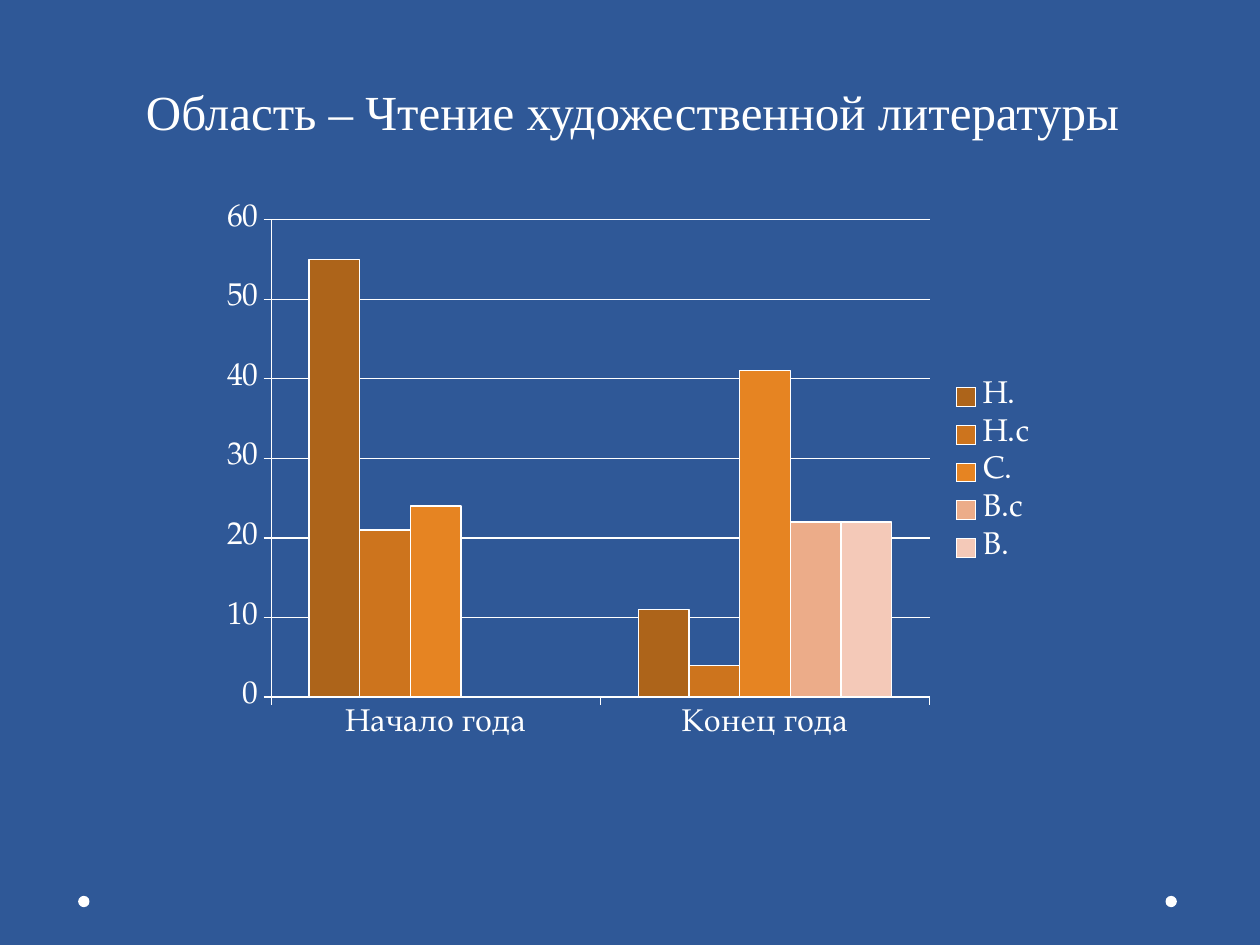
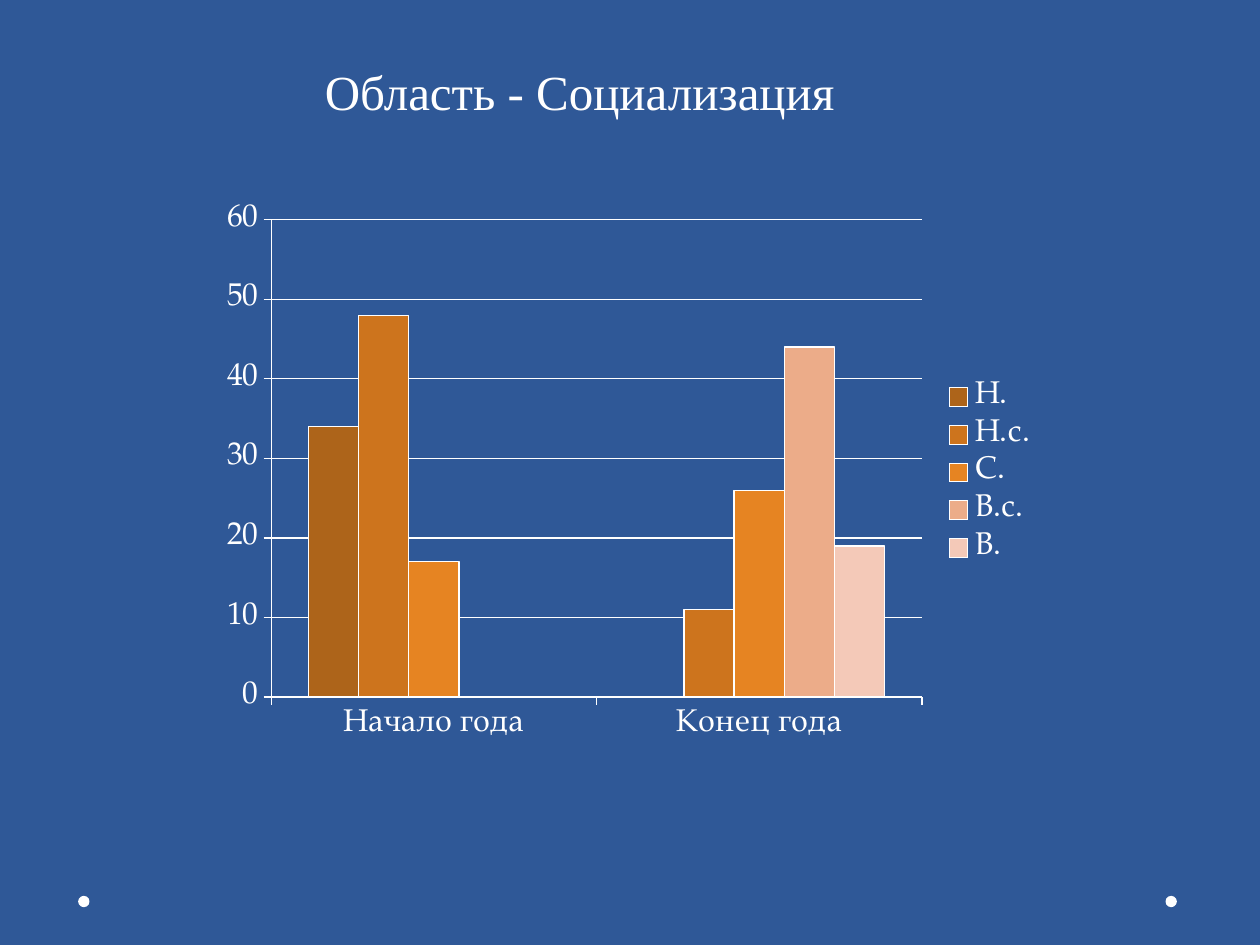
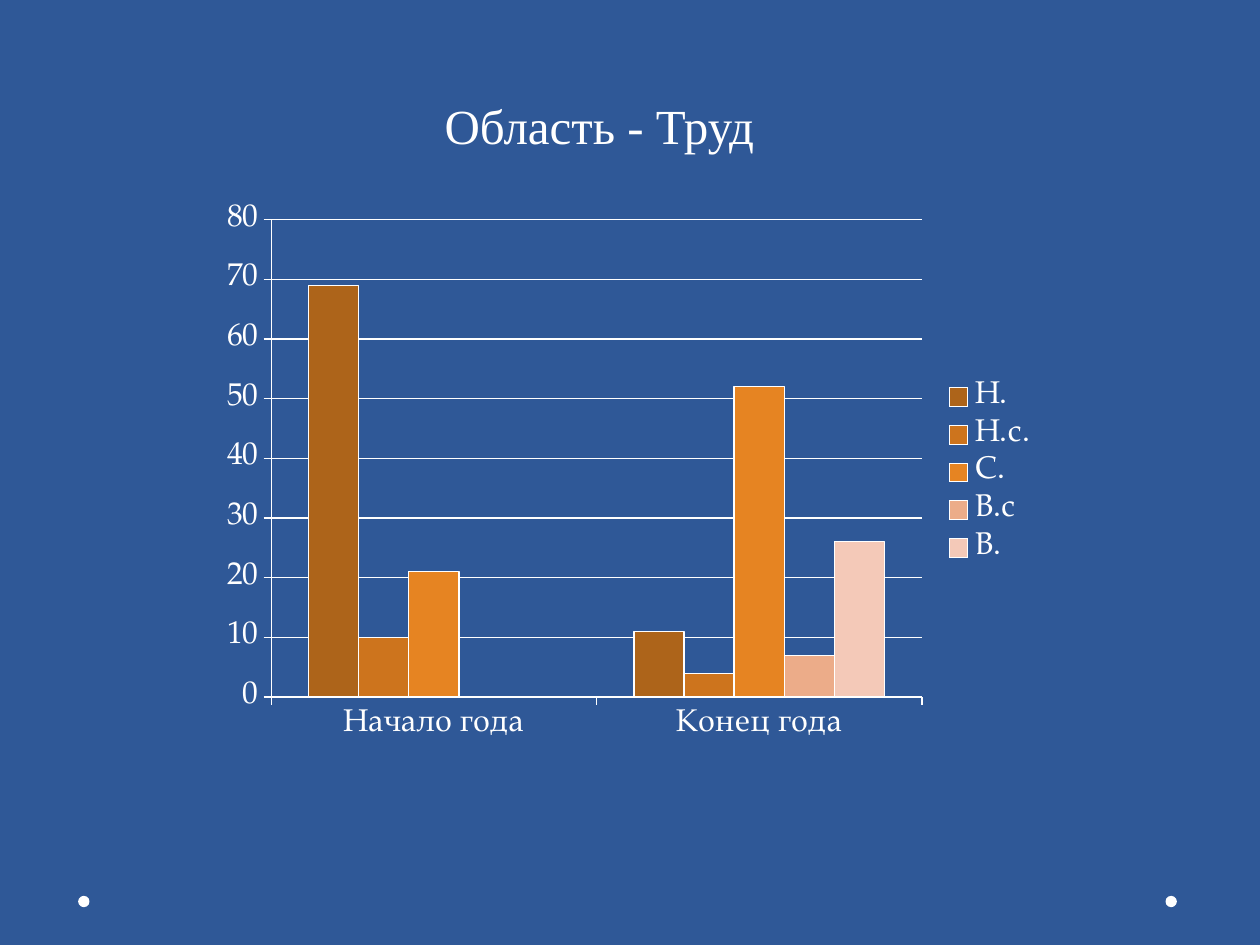
from dataclasses import dataclass

from pptx import Presentation
from pptx.chart.data import CategoryChartData
from pptx.dml.color import RGBColor
from pptx.enum.chart import XL_CHART_TYPE as ChartType
from pptx.enum.chart import XL_LEGEND_POSITION as LegendPosition
from pptx.enum.chart import XL_TICK_MARK as TickMark
from pptx.enum.shapes import MSO_SHAPE as ShapeKind
from pptx.enum.text import MSO_AUTO_SIZE as AutoSize
from pptx.util import Inches, Pt


@dataclass(frozen=True)
class Theme:
    background = RGBColor.from_string("2F5897")
    foreground = RGBColor.from_string("FFFFFF")
    levels = [RGBColor.from_string(code) for code in
              ("AD641A", "CD741D", "E68422", "ECAC89", "F4C9B8")]
    title_font = "Times New Roman"
    chart_font = "TeX Gyre Pagella"
    title_size = Pt(28)
    chart_size = Pt(18)
    line_width = Pt(0.75)


theme = Theme()


def style_line(line):
    line.color.rgb = theme.foreground
    line.width = theme.line_width


periods = ["Начало года", "Конец года"]

# Title, title box (left, top, width), axis maximum, level: values per period
areas = [
    ("Область – Чтение художественной литературы", (1.06, 0.6, 8.01), 60,
     {"Н.": (55, 11), "Н.с": (21, 4), "С.": (24, 41),
      "В.с": (0, 22), "В.": (0, 22)}),
    ("Область - Социализация", (2.48, 0.44, 4.29), 60,
     {"Н.": (34, 0), "Н.с.": (48, 11), "С.": (17, 26),
      "В.с.": (0, 44), "В.": (0, 19)}),
    ("Область - Труд", (3.43, 0.71, 2.69), 80,
     {"Н.": (69, 11), "Н.с.": (10, 4), "С.": (21, 52),
      "В.с": (0, 7), "В.": (0, 26)}),
]

presentation = Presentation()
presentation.slide_width = Inches(10)
presentation.slide_height = Inches(7.5)

for title, (left, top, width), maximum, levels in areas:
    slide = presentation.slides.add_slide(presentation.slide_layouts[6])
    slide.background.fill.solid()
    slide.background.fill.fore_color.rgb = theme.background

    # Footer dots
    for dot_left in (9.25, 0.62):
        dot = slide.shapes.add_shape(ShapeKind.OVAL, Inches(dot_left), Inches(7.11),
                                     Inches(0.09), Inches(0.09))
        dot.shadow.inherit = False
        dot.fill.solid()
        dot.fill.fore_color.rgb = theme.foreground
        dot.line.fill.background()

    # Chart
    chart_data = CategoryChartData()
    chart_data.categories = periods
    for level, values in levels.items():
        chart_data.add_series(level, values)
    chart = slide.shapes.add_chart(
        ChartType.COLUMN_CLUSTERED, Inches(1.67), Inches(1.53),
        Inches(6.67), Inches(4.44), chart_data).chart
    chart.has_title = False
    chart.font.name = theme.chart_font
    chart.font.size = theme.chart_size
    chart.font.color.rgb = theme.foreground
    chart.has_legend = True
    chart.legend.position = LegendPosition.RIGHT
    chart.legend.include_in_layout = False

    # Axes
    for axis in (chart.category_axis, chart.value_axis):
        axis.major_tick_mark = TickMark.OUTSIDE
        axis.minor_tick_mark = TickMark.NONE
        style_line(axis.format.line)
    chart.value_axis.minimum_scale = 0
    chart.value_axis.maximum_scale = maximum
    chart.value_axis.major_unit = 10
    chart.value_axis.has_major_gridlines = True
    style_line(chart.value_axis.major_gridlines.format.line)

    # Columns
    plot = chart.plots[0]
    plot.gap_width = 150
    plot.overlap = 0
    plot.vary_by_categories = False
    for series, color in zip(plot.series, theme.levels):
        series.format.fill.solid()
        series.format.fill.fore_color.rgb = color
        style_line(series.format.line)

    # Title
    title_box = slide.shapes.add_textbox(Inches(left), Inches(top),
                                         Inches(width), Inches(0.57))
    text_frame = title_box.text_frame
    text_frame.word_wrap = False
    text_frame.auto_size = AutoSize.SHAPE_TO_FIT_TEXT
    paragraph = text_frame.paragraphs[0]
    paragraph.text = title
    paragraph.font.name = theme.title_font
    paragraph.font.size = theme.title_size
    paragraph.font.color.rgb = theme.foreground

presentation.save("out.pptx")
